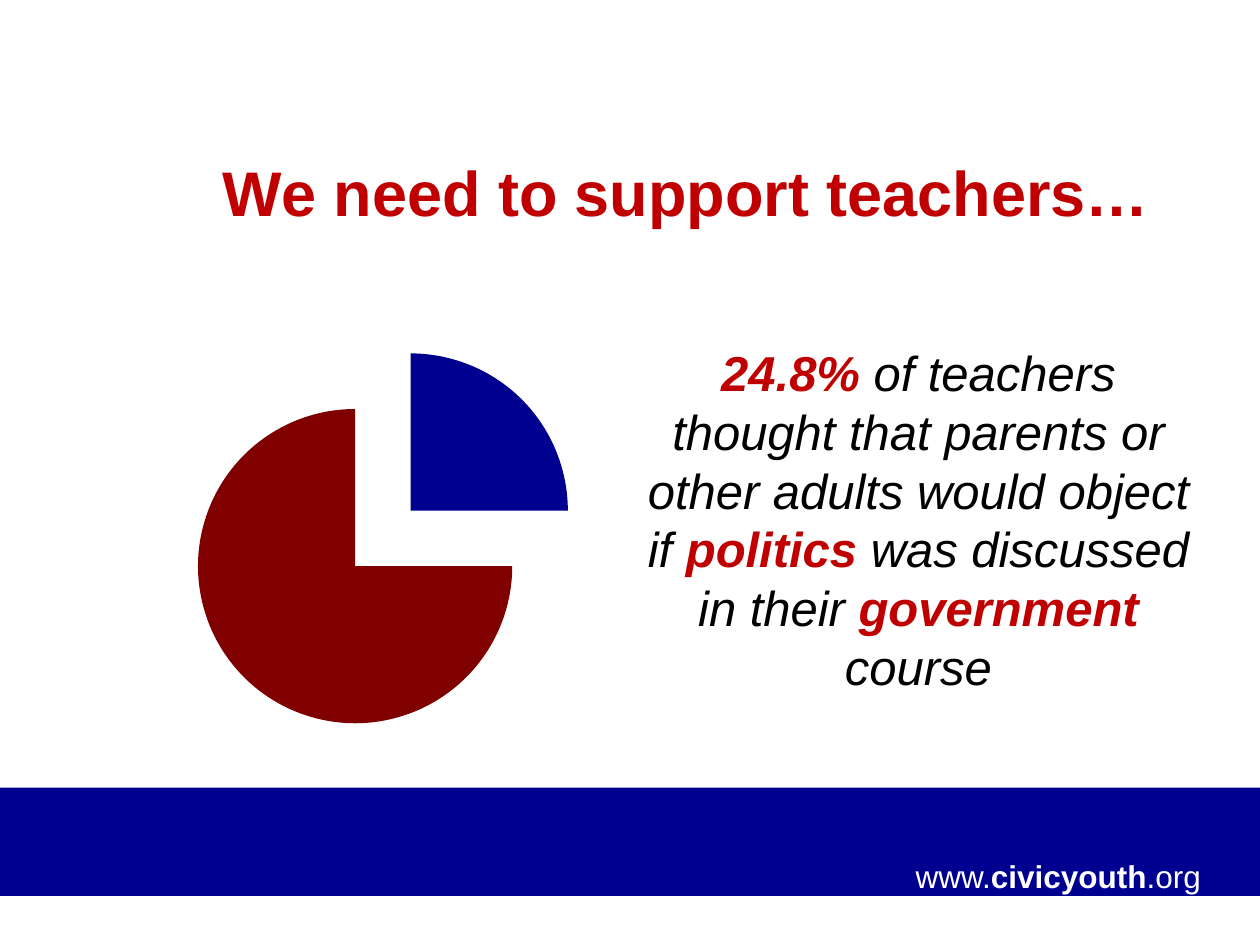
from pptx import Presentation
from pptx.chart.data import CategoryChartData
from pptx.dml.color import RGBColor
from pptx.enum.chart import XL_CHART_TYPE
from pptx.enum.shapes import MSO_SHAPE
from pptx.enum.text import MSO_ANCHOR, PP_ALIGN
from pptx.oxml import parse_xml
from pptx.oxml.ns import nsdecls
from pptx.util import Cm, Pt

NAVY = RGBColor(0x00, 0x00, 0x90)
MAROON = RGBColor(0x80, 0x00, 0x00)
RED = RGBColor(0xC0, 0x00, 0x00)
BLACK = RGBColor(0x00, 0x00, 0x00)
WHITE = RGBColor(0xFF, 0xFF, 0xFF)
FONT = "Arial"

# Content: text runs are (text, emphasised)
TITLE = [("We need to support teachers…", True)]
FINDING = [
    ("24.8% ", True),
    ("of teachers thought that parents or other adults would object if ", False),
    ("politics", True),
    (" was discussed in their ", False),
    ("government", True),
    (" course", False),
]
ADDRESS = [("www.", False), ("civicyouth", True), (".org", False)]
SHARES = [("1", 25, NAVY), ("2", 75, MAROON)]
EXPLOSION = 25

# Places in cm: left, top, width, height
SLIDE = (25.4, 19.05)
BAND_AT = (0, 15.88, 25.4, 2.18)
ADDRESS_AT = (18.21, 17.15, 6.55, 1.02)
TITLE_AT = (4.24, 2.97, 19.48, 1.8)
FINDING_AT = (12.7, 6.78, 11.63, 7.44)
CHART_AT = (1.27, 6.55, 12.9, 8.61)
PIE_SIZE = 7.92  # side of the plot square, exploded slices included


def cm(box):
    return [Cm(v) for v in box]


def write(shape, runs, size, color, strong, align=PP_ALIGN.LEFT, italic=False):
    tf = shape.text_frame
    tf.word_wrap = True
    tf.vertical_anchor = MSO_ANCHOR.TOP
    p = tf.paragraphs[0]
    p.alignment, p.line_spacing = align, 1.0
    p.font.name, p.font.size, p.font.italic = FONT, Pt(size), italic
    for text, emphasised in runs:
        r = p.add_run()
        r.text = text
        r.font.bold = emphasised
        r.font.color.rgb = strong if emphasised else color


def explosion():
    return parse_xml(f'<c:explosion {nsdecls("c")} val="{EXPLOSION}"/>')


prs = Presentation()
prs.slide_width, prs.slide_height = cm(SLIDE)
s = prs.slides.add_slide(prs.slide_layouts[5])

# Footer band and web address
band = s.shapes.add_shape(MSO_SHAPE.RECTANGLE, *cm(BAND_AT))
band.shadow.inherit = False
band.fill.solid()
band.fill.fore_color.rgb = NAVY
band.line.fill.background()
write(s.shapes.add_textbox(*cm(ADDRESS_AT)), ADDRESS, 18, WHITE, WHITE)

# Title
title = s.shapes.title
title.left, title.top, title.width, title.height = cm(TITLE_AT)
write(title, TITLE, 36, RED, RED)

# Finding
write(s.shapes.add_textbox(*cm(FINDING_AT)), FINDING, 28, BLACK, RED,
      align=PP_ALIGN.CENTER, italic=True)

# Pie chart
data = CategoryChartData()
data.categories = [name for name, _, _ in SHARES]
data.add_series("Series 1", [share for _, share, _ in SHARES])
chart = s.shapes.add_chart(XL_CHART_TYPE.PIE, *cm(CHART_AT), data).chart
chart.has_legend = chart.has_title = False
chart.font.name, chart.font.size = FONT, Pt(18)
chart.font.color.rgb = BLACK
plot = chart.plots[0]
plot.vary_by_categories = True
series = plot.series[0]
for i, (_, _, color) in enumerate(SHARES):
    fmt = series.points[i].format
    fmt.fill.solid()
    fmt.fill.fore_color.rgb = color
    fmt.line.fill.background()

# Explode the series and each of its slices
ser = series._element
ser.find("{*}dPt").addprevious(explosion())
for point in ser.findall("{*}dPt"):
    point.find("{*}spPr").addprevious(explosion())

# Centre the plot square in the chart frame
w, h = (PIE_SIZE / side for side in CHART_AT[2:])
layout = parse_xml(
    f'<c:layout {nsdecls("c")}><c:manualLayout><c:layoutTarget val="inner"/>'
    '<c:xMode val="edge"/><c:yMode val="edge"/>'
    f'<c:x val="{(1 - w) / 2:.3f}"/><c:y val="{(1 - h) / 2:.3f}"/>'
    f'<c:w val="{w:.3f}"/><c:h val="{h:.3f}"/></c:manualLayout></c:layout>')
area = chart._chartSpace.chart.plotArea
for old in area.findall("{*}layout"):
    area.remove(old)
area.insert(0, layout)

prs.save("out.pptx")
